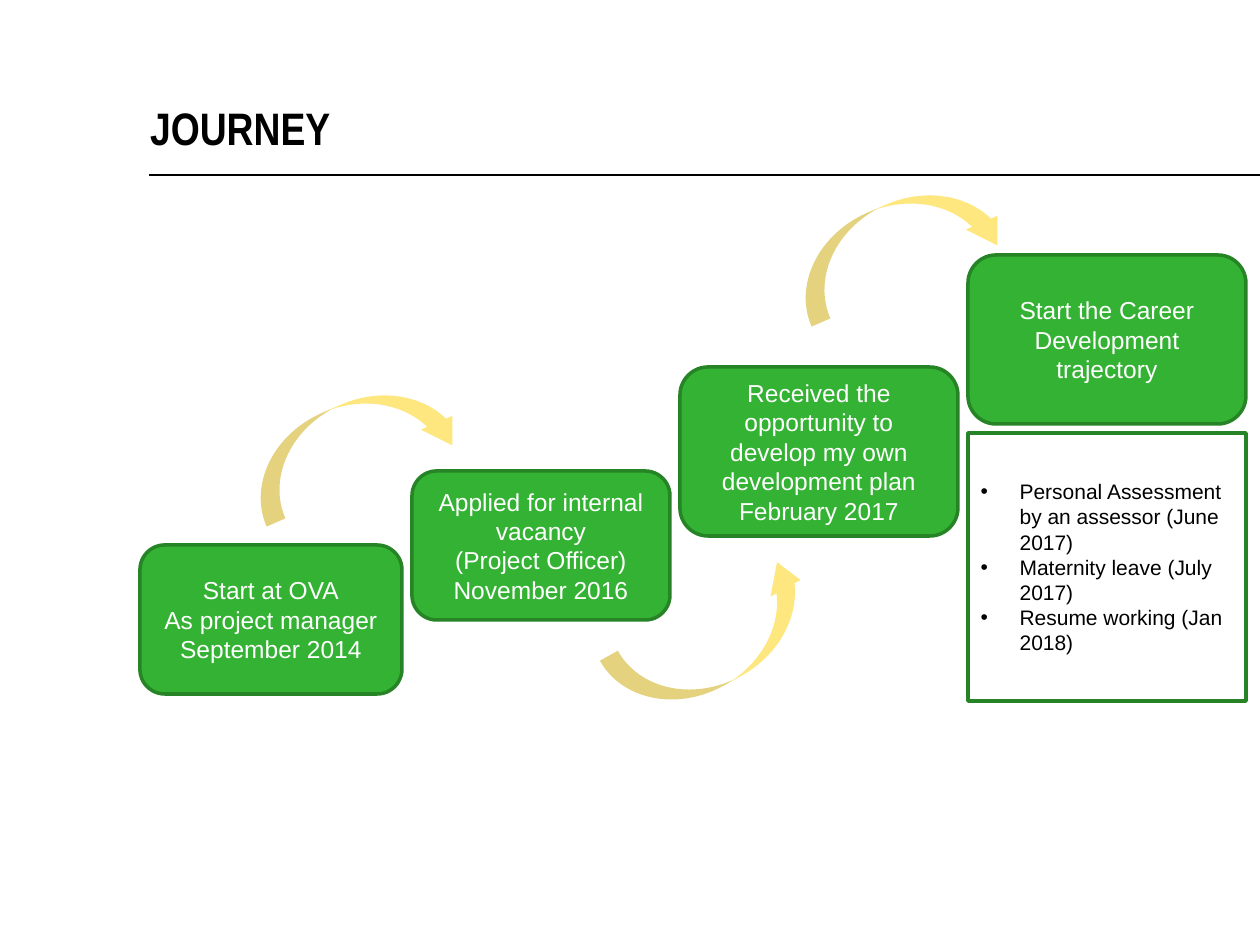
from lxml.etree import SubElement
from pptx import Presentation
from pptx.dml.color import RGBColor
from pptx.enum.shapes import MSO_CONNECTOR, MSO_SHAPE
from pptx.enum.text import MSO_ANCHOR, MSO_AUTO_SIZE, PP_ALIGN
from pptx.oxml.ns import qn
from pptx.util import Inches, Pt

SCALE = Inches(1) / 126
GREEN, DARK_GREEN, YELLOW = "34B233", "268426", "FED100"
BLACK, WHITE = "000000", "FFFFFF"


def emu(px):
    return round(px * SCALE)


def color(value):
    return RGBColor.from_string(value)


class JourneySlide:
    """Holds the journey style and the slide it is applied to."""

    def __init__(self, presentation):
        self.font = "Arial"
        self.title_font = "Arial Narrow"
        self.slide = presentation.slides.add_slide(presentation.slide_layouts[1])

    def place(self, shape, left, top, width, height):
        shape.left, shape.top = emu(left), emu(top)
        shape.width, shape.height = emu(width), emu(height)

    def outline(self, shape):
        shape.line.color.rgb = color(DARK_GREEN)
        shape.line.width = Pt(2)

    def add_run(self, paragraph, text, size, ink, font=None, bold=False):
        run = paragraph.add_run()
        run.text = text
        run.font.name = font or self.font
        run.font.size = Pt(size)
        run.font.bold = bold
        run.font.color.rgb = color(ink)

    def paragraphs(self, frame, lines):
        for index, line in enumerate(lines):
            yield (frame.add_paragraph() if index else frame.paragraphs[0]), line

    def title(self, text, left, top, width, height):
        shape = self.slide.shapes.title
        self.place(shape, left, top, width, height)
        frame = shape.text_frame
        frame.auto_size = MSO_AUTO_SIZE.NONE
        frame.vertical_anchor = MSO_ANCHOR.BOTTOM
        frame.margin_left = frame.margin_right = 0
        frame.margin_top = frame.margin_bottom = 0
        paragraph = frame.paragraphs[0]
        paragraph.alignment = PP_ALIGN.LEFT
        paragraph.line_spacing = Pt(25)
        self.add_run(paragraph, text, 26, BLACK, self.title_font, True)

    def rule(self, left, right, top):
        connector = self.slide.shapes.add_connector(
            MSO_CONNECTOR.STRAIGHT, emu(left), emu(top), emu(right), emu(top))
        connector.line.color.rgb = color(BLACK)
        connector.line.width = Pt(1)
        SubElement(connector._element.spPr, qn("a:effectLst"))

    def step(self, lines, left, top, width, height):
        shape = self.slide.shapes.add_shape(
            MSO_SHAPE.ROUNDED_RECTANGLE, emu(left), emu(top), emu(width), emu(height))
        shape.shadow.inherit = False
        shape.fill.solid()
        shape.fill.fore_color.rgb = color(GREEN)
        self.outline(shape)
        frame = shape.text_frame
        frame.word_wrap = True
        frame.vertical_anchor = MSO_ANCHOR.MIDDLE
        for paragraph, line in self.paragraphs(frame, lines):
            paragraph.alignment = PP_ALIGN.CENTER
            self.add_run(paragraph, line, 14, WHITE)

    def bullets(self, lines, left, top, width, height):
        shape = self.slide.placeholders[1]
        self.place(shape, left, top, width, height)
        self.outline(shape)
        frame = shape.text_frame
        frame.auto_size = MSO_AUTO_SIZE.NONE
        frame.vertical_anchor = MSO_ANCHOR.MIDDLE
        for paragraph, line in self.paragraphs(frame, lines):
            properties = paragraph._p.get_or_add_pPr()
            properties.set("marL", str(emu(39)))
            properties.set("indent", str(-emu(39)))
            SubElement(properties, qn("a:buChar"), char="•")
            paragraph.space_before = Pt(0)
            self.add_run(paragraph, line, 12, BLACK)

    def curved_arrow(self, left, top, rotation, flipped=False):
        shape = self.slide.shapes.add_shape(
            MSO_SHAPE.CURVED_DOWN_ARROW, emu(left), emu(top), emu(220), emu(82))
        shape.shadow.inherit = False
        for index, value in enumerate((0.25, 0.42, 0.33)):
            shape.adjustments[index] = value
        shape.rotation = rotation
        if flipped:
            shape._element.spPr.xfrm.set("flipH", "1")
        shape.fill.solid()
        shape.fill.fore_color.rgb = color(YELLOW)
        srgb = shape._element.spPr.find(qn("a:solidFill")).find(qn("a:srgbClr"))
        SubElement(srgb, qn("a:alpha"), val="50000")
        shape.line.fill.background()


def main():
    presentation = Presentation()
    presentation.slide_width, presentation.slide_height = emu(1260), emu(945)
    journey = JourneySlide(presentation)
    journey.rule(149, 1260, 175)
    journey.title("JOURNEY", 150, 54, 1071, 101)
    steps = [
        (["Start at OVA", "As project manager", "September 2014"], 140, 545, 262, 149),
        (["Applied for internal vacancy", "(Project Officer)", "November 2016"],
         412, 471, 258, 149),
        (["Received the opportunity to develop my own development plan",
          "February 2017"], 680, 367, 278, 169),
        (["Start the Career Development trajectory"], 968, 255, 278, 169),
    ]
    for lines, *box in steps:
        journey.step(lines, *box)
    journey.bullets(
        ["Personal Assessment by an assessor (June 2017)",
         "Maternity leave (July 2017)",
         "Resume working (Jan 2018)"], 968, 433, 278, 268)
    journey.curved_arrow(241, 404, 336.4)
    journey.curved_arrow(606, 602, 150.9, flipped=True)
    journey.curved_arrow(786, 204, 336.4)
    presentation.save("out.pptx")


if __name__ == "__main__":
    main()
